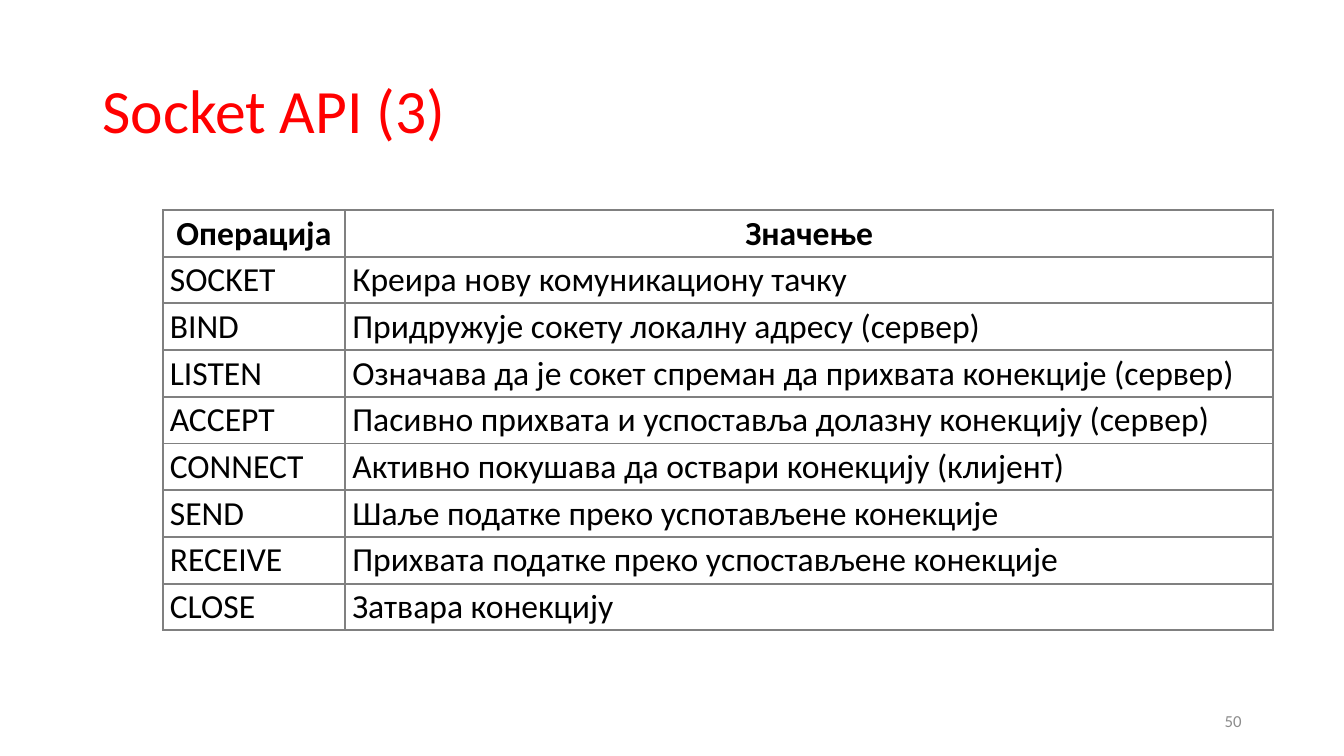
from lxml import etree
from pptx import Presentation
from pptx import util as u
from pptx.dml.color import RGBColor
from pptx.enum import text
from pptx.oxml.ns import qn


def write(frame, words, size=24, color="000000", bold=False,
          align=text.PP_ALIGN.LEFT, spacing=1.0):
    frame.word_wrap = True
    frame.vertical_anchor = text.MSO_ANCHOR.MIDDLE
    paragraph = frame.paragraphs[0]
    paragraph.alignment = align
    paragraph.line_spacing = spacing
    run = paragraph.add_run()
    run.text = words
    run.font.name = "Calibri"
    run.font.size = u.Pt(size)
    run.font.bold = bold
    run.font.color.rgb = RGBColor.from_string(color)


def outline(cell, color, width):
    properties = cell._tc.get_or_add_tcPr()
    for side in ("a:lnL", "a:lnR", "a:lnT", "a:lnB"):
        line = etree.SubElement(properties, qn(side), w=str(u.Pt(width)))
        fill = etree.SubElement(line, qn("a:solidFill"))
        etree.SubElement(fill, qn("a:srgbClr"), val=color)


deck = Presentation()
deck.slide_width, deck.slide_height = u.Cm(33.87), u.Cm(19.05)
slide = deck.slides.add_slide(deck.slide_layouts[6])

heading = slide.shapes.add_textbox(u.Cm(2.33), u.Cm(1.01), u.Cm(29.21), u.Cm(3.68))
write(heading.text_frame, "Socket API (3)", size=44, color="FF0000", spacing=0.9)

page_number = slide.shapes.add_textbox(u.Cm(23.92), u.Cm(17.66), u.Cm(7.62), u.Cm(1.01))
write(page_number.text_frame, "50", size=12, color="8C8C8C", align=text.PP_ALIGN.RIGHT)

operations = [
    ("Операција", "Значење"),
    ("SOCKET", "Креира нову комуникациону тачку"),
    ("BIND", "Придружује сокету локалну адресу (сервер)"),
    ("LISTEN", "Означава да је сокет спреман да прихвата конекције (сервер)"),
    ("ACCEPT", "Пасивно прихвата и успоставља долазну конекцију (сервер)"),
    ("CONNECT", "Активно покушава да оствари конекцију (клијент)"),
    ("SEND", "Шаље податке преко успотављене конекције"),
    ("RECEIVE", "Прихвата податке преко успостављене конекције"),
    ("CLOSE", "Затвара конекцију"),
]
column_widths = [u.Cm(4.6), u.Cm(23.39)]
row_height = u.Cm(1.15)

api_table = slide.shapes.add_table(
    len(operations), len(column_widths), u.Cm(4.1), u.Cm(5.29),
    sum(column_widths), row_height * len(operations)).table
api_table.horz_banding = False
for column, width in zip(api_table.columns, column_widths):
    column.width = width

for row_index, operation in enumerate(operations):
    api_table.rows[row_index].height = row_height
    is_header = row_index == 0
    for column_index, words in enumerate(operation):
        cell = api_table.cell(row_index, column_index)
        cell.margin_left = cell.margin_right = u.Cm(0.18)
        cell.margin_top = cell.margin_bottom = u.Cm(0.08)
        cell.vertical_anchor = text.MSO_ANCHOR.MIDDLE
        outline(cell, "808080", 1.5)
        cell.fill.background()
        write(cell.text_frame, words, bold=is_header,
              align=text.PP_ALIGN.CENTER if is_header else text.PP_ALIGN.LEFT)

deck.save("out.pptx")
